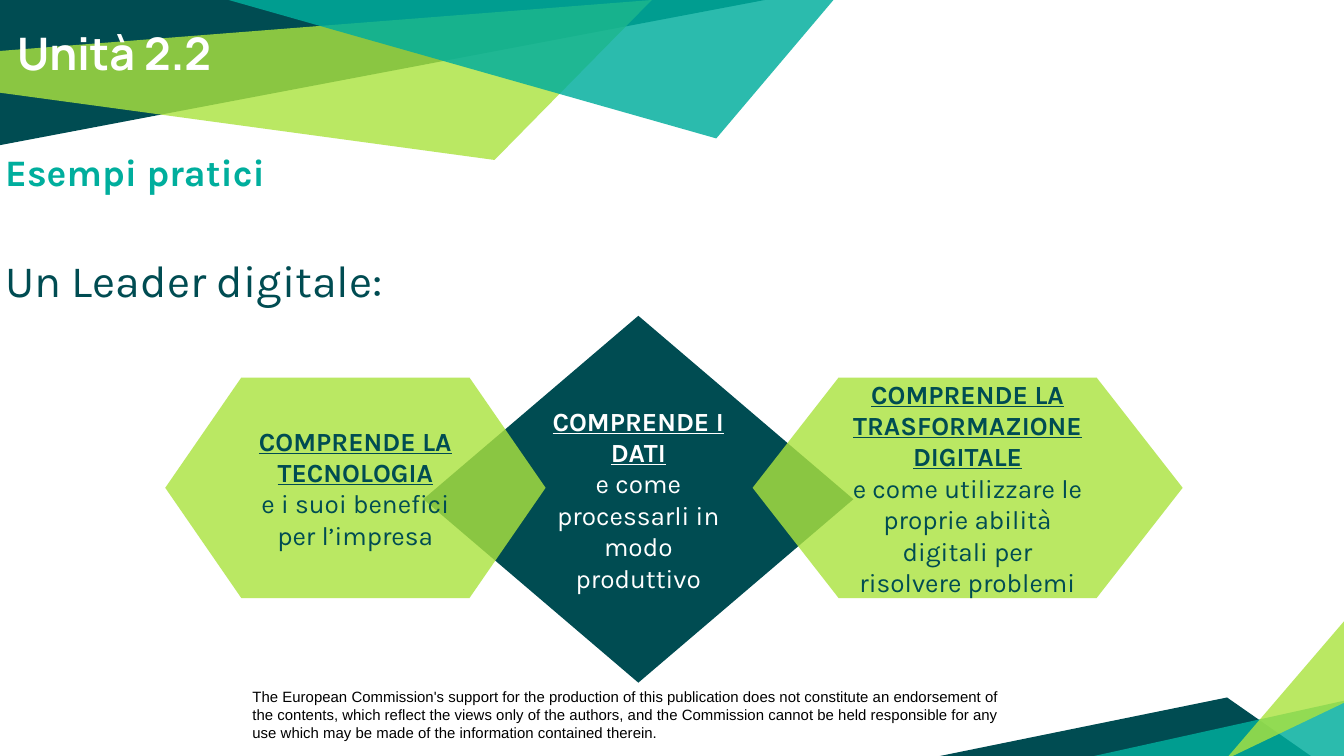
"""Build the slide on the three things a digital leader understands."""
from dataclasses import dataclass

from lxml import etree
from pptx import Presentation
from pptx.dml.color import RGBColor
from pptx.enum import shapes, text
from pptx.oxml import ns
from pptx.util import Inches, Pt


@dataclass(frozen=True)
class Theme:
    dark: str = "004C52"
    lime: str = "ABE33F"
    teal: str = "00AE9D"
    white: str = "FFFFFF"
    black: str = "000000"
    lime_alpha: int = 81
    teal_alpha: int = 83
    body_font: str = "Karla"
    title_font: str = "Manrope"
    note_font: str = "Arial"
    title_size: int = 24
    subtitle_size: int = 20
    card_size: int = 14
    note_size: int = 8


THEME = Theme()
DARK = (THEME.dark, 100)
LIME = (THEME.lime, THEME.lime_alpha)
TEAL = (THEME.teal, THEME.teal_alpha)

DISCLAIMER = (
    "The European Commission's support for the production of this publication "
    "does not constitute an endorsement of the contents, which reflect the views "
    "only of the authors, and the Commission cannot be held responsible for any "
    "use which may be made of the information contained therein."
)
RIBBONS = [
    (DARK, [(0, 0), (0, 1.08), (5.69, 0)]),
    (LIME, [(-0.01, 0.38), (0, 0.69), (3.68, 1.19), (4.85, 0)]),
    (DARK, [(6.97, 5.63), (9.76, 5.63), (9.13, 5.19)]),
    (TEAL, [(10.02, 5.21), (10.02, 5.65), (8.03, 5.65)]),
    (LIME, [(10.02, 5.22), (10.02, 4.6), (9.12, 5.65)]),
    (TEAL, [(1.7, 0), (5.33, 1.03), (6.21, -0.01), (6.09, 0)]),
]
DIAMOND = shapes.MSO_SHAPE.DIAMOND
HEXAGON = shapes.MSO_SHAPE.FLOWCHART_PREPARATION
CARDS = [
    (DIAMOND, (3.15, 2.35, 3.2, 2.73), DARK, THEME.white,
     "COMPRENDE I DATI", "e come processarli in modo produttivo"),
    (HEXAGON, (1.23, 2.81, 2.83, 1.64), LIME, THEME.dark,
     "COMPRENDE LA TECNOLOGIA", "e i suoi benefici per l’impresa"),
    (HEXAGON, (5.6, 2.81, 3.2, 1.64), LIME, THEME.dark,
     "COMPRENDE LA TRASFORMAZIONE DIGITALE",
     "e come utilizzare le proprie abilità digitali per risolvere problemi"),
]


def paint(shape, fill):
    color, alpha = fill
    shape.shadow.inherit = False
    shape.fill.solid()
    shape.fill.fore_color.rgb = RGBColor.from_string(color)
    shape.line.fill.background()
    if alpha < 100:
        tint = shape.fill._xPr.find(".//" + ns.qn("a:srgbClr"))
        etree.SubElement(tint, ns.qn("a:alpha"), val=str(alpha * 1000))


def add_ribbon(page, fill, points):
    corners = [(Inches(x), Inches(y)) for x, y in points]
    builder = page.shapes.build_freeform(*corners[0], scale=1.0)
    builder.add_line_segments(corners[1:], close=True)
    paint(builder.convert_to_shape(), fill)


def write(shape, lines):
    frame = shape.text_frame
    frame.word_wrap = True
    frame.margin_left = frame.margin_right = Inches(0.1)
    frame.margin_top = frame.margin_bottom = Inches(0.1)
    frame.text = "\n".join(line[0] for line in lines)
    for para, (_, font, size, color, bold) in zip(frame.paragraphs, lines):
        for span in para.runs:
            span.font.name = font
            span.font.size = Pt(size)
            span.font.bold = bold
            span.font.color.rgb = RGBColor.from_string(color)
    return frame


def add_text(page, place, lines):
    box = page.shapes.add_textbox(*map(Inches, place))
    return write(box, lines)


def add_card(page, kind, place, fill, color, heading, detail):
    card = page.shapes.add_shape(kind, *map(Inches, place))
    paint(card, fill)
    frame = write(card, [
        (heading, THEME.body_font, THEME.card_size, color, True),
        (detail, THEME.body_font, THEME.card_size, color, False),
    ])
    frame.vertical_anchor = text.MSO_ANCHOR.MIDDLE
    for para in frame.paragraphs:
        para.alignment = text.PP_ALIGN.CENTER
    frame.paragraphs[0].runs[0].font.underline = True


def main():
    deck = Presentation()
    deck.slide_width = Inches(10)
    deck.slide_height = deck.slide_width * 9 // 16
    page = deck.slides.add_slide(deck.slide_layouts[6])

    note = add_text(page, (1.78, 5.07, 5.79, 0.5), [
        (DISCLAIMER, THEME.note_font, THEME.note_size, THEME.black, False)])
    note.margin_top = note.margin_bottom = Inches(0.05)
    for fill, points in RIBBONS:
        add_ribbon(page, fill, points)

    body = add_text(page, (-0.06, 1.01, 10, 3.02), [
        ("Esempi pratici", THEME.body_font, THEME.subtitle_size, THEME.teal, True),
        ("Un Leader digitale:", THEME.body_font, THEME.title_size, THEME.dark, False),
    ])
    body.paragraphs[1].space_before = Pt(31.5)
    add_text(page, (0.03, 0.09, 8.06, 0.6), [
        ("Unità 2.2", THEME.title_font, THEME.title_size, THEME.white, True)])
    for card in CARDS:
        add_card(page, *card)
    deck.save("out.pptx")


if __name__ == "__main__":
    main()
